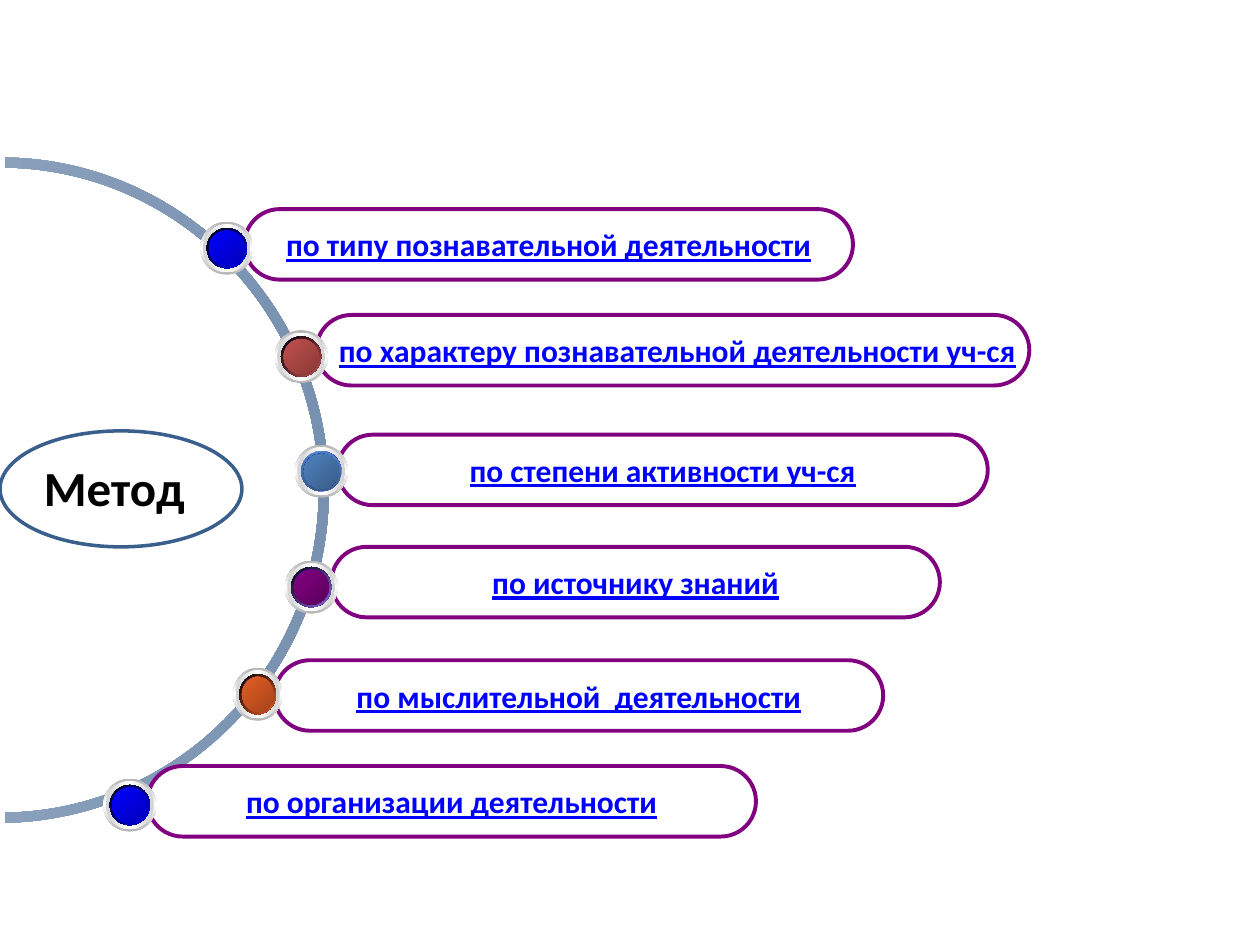
from pptx import Presentation
from pptx.dml.color import RGBColor
from pptx.enum import shapes, text
from pptx.oxml import parse_xml
from pptx.oxml.ns import nsdecls, qn
from pptx.util import Inches, Pt

WHITE = RGBColor(0xFF, 0xFF, 0xFF)
BLACK = RGBColor(0, 0, 0)
STEEL = RGBColor(0x3A, 0x5F, 0x8C)
PURPLE = RGBColor(0x80, 0, 0x80)
BLUE = RGBColor(0, 0, 0xFF)
RED = RGBColor(0xC0, 0x50, 0x4D)
SKY = RGBColor(0x4F, 0x81, 0xBD)
VIOLET = RGBColor(0x8D, 0x67, 0xE1)
ORANGE = RGBColor(0xE3, 0x5E, 0x23)
ARC_LIGHT = RGBColor(0x5C, 0x7A, 0xA2)
ARC_DARK = RGBColor(0x1F, 0x49, 0x7D)

FONT = "Calibri"
PILL_HEIGHT = 0.56
BEAD_HEIGHT = 0.42
CENTER, LEFT = text.PP_ALIGN.CENTER, text.PP_ALIGN.LEFT
BLUE_BEAD = ([(BLACK, 100), (BLUE, 100)], 45, BLUE)

# Each row: label, alignment, pill (left, top, width), bead (left, top, width), bead colours
ROWS = [
    ("по типу познавательной деятельности", CENTER,
     (1.94, 1.66, 4.83), (1.59, 1.76, 0.42), BLUE_BEAD),
    ("по характеру познавательной деятельности уч-ся", LEFT,
     (2.51, 2.5, 5.66), (2.18, 2.62, 0.42), ([(BLACK, 100), (RED, 100)], 45, RED)),
    ("по степени активности уч-ся", CENTER,
     (2.68, 3.45, 5.16), (2.34, 3.53, 0.42), ([(SKY, 100), (SKY, 47)], 90, SKY)),
    ("по источнику знаний", CENTER,
     (2.63, 4.34, 4.83), (2.26, 4.45, 0.42), ([(BLACK, 100), (VIOLET, 100)], 45, PURPLE)),
    ("по мыслительной  деятельности", CENTER,
     (2.18, 5.24, 4.83), (1.85, 5.3, 0.39), ([(BLACK, 100), (ORANGE, 100)], 45, ORANGE)),
    ("по организации деятельности", CENTER,
     (1.17, 6.08, 4.83), (0.82, 6.18, 0.42), BLUE_BEAD),
]


def fill_gradient(shape, colors, angle, alpha=100):
    """Give a shape evenly spaced (colour, shade) stops and no outline."""
    shape.shadow.inherit = False
    shape.line.fill.background()
    shape.fill.gradient()
    stops = ""
    for i, (color, shade) in enumerate(colors):
        effects = f'<a:shade val="{shade * 1000}"/>' if shade < 100 else ""
        effects += f'<a:alpha val="{alpha * 1000}"/>' if alpha < 100 else ""
        stops += (f'<a:gs pos="{100000 * i // (len(colors) - 1)}">'
                  f'<a:srgbClr val="{color}">{effects}</a:srgbClr></a:gs>')
    gradient = parse_xml(
        f'<a:gradFill {nsdecls("a")} rotWithShape="1"><a:gsLst>{stops}</a:gsLst>'
        f'<a:lin ang="{angle * 60000}" scaled="1"/></a:gradFill>')
    properties = shape._element.spPr
    properties.replace(properties.find(qn("a:gradFill")), gradient)


def add_outlined(slide, kind, box, color, width):
    """Add a white shape with a coloured outline."""
    shape = slide.shapes.add_shape(kind, *map(Inches, box))
    shape.shadow.inherit = False
    shape.fill.solid()
    shape.fill.fore_color.rgb = WHITE
    shape.line.color.rgb = color
    shape.line.width = Pt(width)
    return shape


def write(shape, words, size, color, alignment, underline=None):
    """Put one bold paragraph into a shape."""
    paragraph = shape.text_frame.paragraphs[0]
    paragraph.text = words
    paragraph.alignment = alignment
    font = paragraph.runs[0].font
    font.name, font.size, font.bold, font.underline = FONT, Pt(size), True, underline
    font.color.rgb = color


def add_arc(slide, box):
    """Draw a half ring with Bézier edges, turned to open to the left."""
    left, top, width, height = box
    builder = slide.shapes.build_freeform(Inches(left), Inches(top))
    builder.add_line_segments([(Inches(left + width), Inches(top + height))])
    arc = builder.convert_to_shape()

    def point(x, y):
        return (f'<a:pt x="{Inches(y - top - height / 2 + width / 2)}" '
                f'y="{Inches(height / 2 - x)}"/>')

    def curve(*points):
        return f'<a:cubicBezTo>{"".join(point(*p) for p in points)}</a:cubicBezTo>'

    outline = (
        f'<a:moveTo>{point(0.04, 1.33)}</a:moveTo>'
        + curve((1.42, 1.35), (2.53, 2.49), (2.53, 3.89))
        + curve((2.53, 5.29), (1.42, 6.43), (0.04, 6.45))
        + f'<a:lnTo>{point(0.04, 6.53)}</a:lnTo>'
        + curve((1.46, 6.5), (2.61, 5.33), (2.61, 3.89))
        + curve((2.61, 2.45), (1.46, 1.27), (0.04, 1.25)))
    path_list = parse_xml(
        f'<a:pathLst {nsdecls("a")}><a:path w="{Inches(width)}" h="{Inches(height)}">'
        f'{outline}<a:close/></a:path></a:pathLst>')
    geometry = arc._element.spPr.find(qn("a:custGeom"))
    geometry.replace(geometry.find(qn("a:pathLst")), path_list)
    arc.rotation = 90
    fill_gradient(arc, [(ARC_LIGHT, 100), (ARC_DARK, 100)], 270, 60)


def add_pill(slide, box, words, alignment):
    """Add a rounded label."""
    pill = add_outlined(slide, shapes.MSO_SHAPE.ROUNDED_RECTANGLE, box, PURPLE, 2.25)
    pill.adjustments[0] = 0.5
    pill.text_frame.word_wrap = False
    pill.text_frame.vertical_anchor = text.MSO_ANCHOR.MIDDLE
    write(pill, words, 18, BLUE, alignment, True)


def add_bead(slide, box, rim, rim_angle, core):
    """Stack concentric gradient ellipses into a glossy bead."""
    left, top, width, height = box
    layers = [
        (0, [(WHITE, 46), (WHITE, 100), (WHITE, 46)], 90),
        (0.02, [(WHITE, 64), (WHITE, 100), (WHITE, 64)], 0),
        (0.05, [(WHITE, 100), (BLUE, 100), (WHITE, 100)], 45),
        (0.05, rim, rim_angle),
        (0.07, [(BLUE, 55), (BLUE, 100), (BLUE, 55)], 315),
        (0.07, [(core, 100), (core, 49)], 45),
    ]
    group = slide.shapes.add_group_shape()
    for inset, colors, angle in layers:
        ellipse = group.shapes.add_shape(
            shapes.MSO_SHAPE.OVAL, Inches(left + inset), Inches(top + inset),
            Inches(width - 2 * inset), Inches(height - 2 * inset))
        fill_gradient(ellipse, colors, angle)


def add_row(slide, words, alignment, pill, bead, colors):
    """Add a label with its bead."""
    add_pill(slide, (*pill, PILL_HEIGHT), words, alignment)
    add_bead(slide, (*bead, BEAD_HEIGHT), *colors)


def add_title(slide, box):
    """Write the name of the hub."""
    title = slide.shapes.add_textbox(*map(Inches, box))
    title.text_frame.word_wrap = True
    title.text_frame.auto_size = text.MSO_AUTO_SIZE.SHAPE_TO_FIT_TEXT
    write(title, "Метод", 28, BLACK, LEFT)


def main():
    """Build the slide and save it."""
    presentation = Presentation()
    presentation.slide_width, presentation.slide_height = Inches(10), Inches(7.5)
    slide = presentation.slides.add_slide(presentation.slide_layouts[6])
    add_outlined(slide, shapes.MSO_SHAPE.OVAL, (0, 3.42, 1.92, 0.92), STEEL, 2)
    add_arc(slide, (-2.64, 1.28, 5.28, 5.22))
    for row in ROWS:
        add_row(slide, *row)
    add_title(slide, (0.25, 3.58, 1.5, 0.57))
    presentation.save("out.pptx")


if __name__ == "__main__":
    main()
